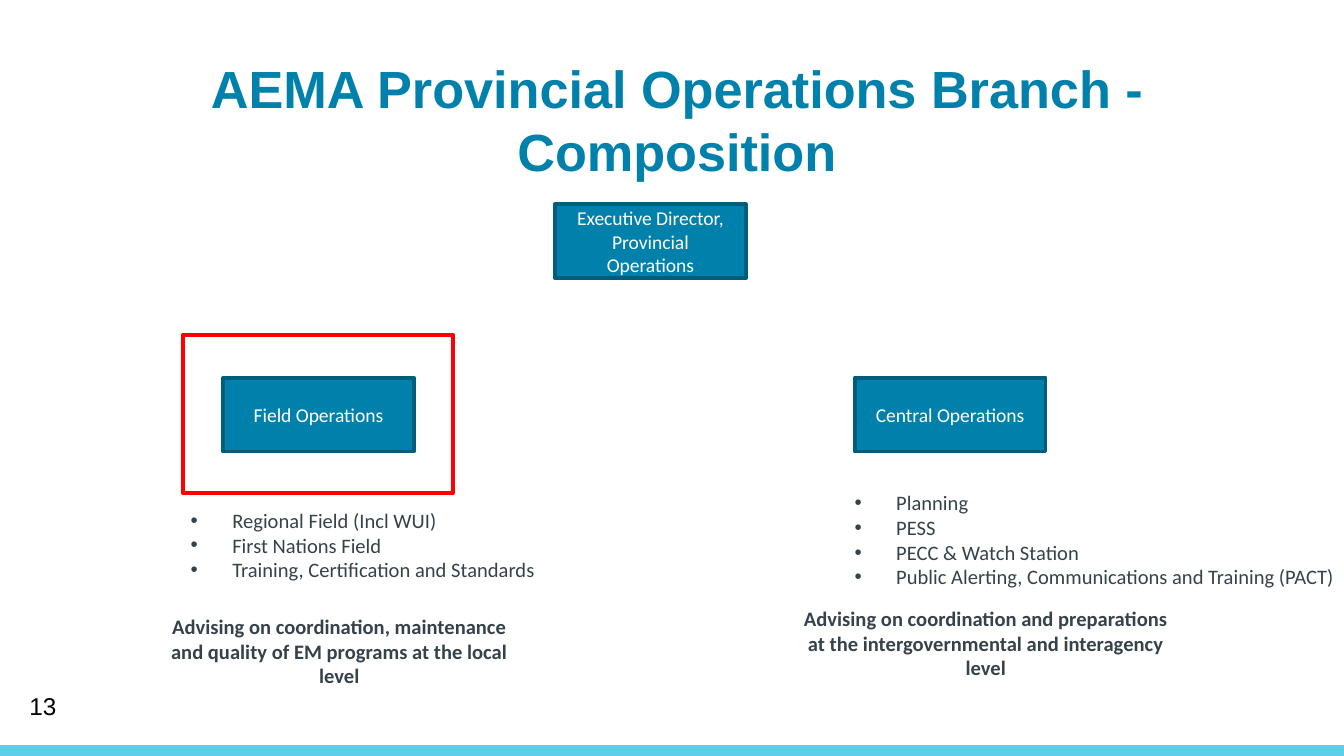
from dataclasses import dataclass

from lxml.etree import SubElement
from pptx import Presentation
from pptx.dml.color import RGBColor as RGB
from pptx.enum.shapes import MSO_SHAPE as Preset
from pptx.enum.text import MSO_ANCHOR as Anchor, MSO_AUTO_SIZE as AutoSize, PP_ALIGN as Align
from pptx.oxml.ns import qn
from pptx.util import Inches, Pt

WIDTH = 10
HEIGHT = WIDTH * 9 / 16
STRIPE = 0.08


@dataclass(frozen=True)
class Theme:
    """Colours, type sizes and fonts of the slide."""

    blue: str = "0081AB"
    navy: str = "005E7C"
    sky: str = "5FCEEA"
    red: str = "FF0000"
    slate: str = "36424A"
    white: str = "FFFFFF"
    black: str = "000000"
    title_size: float = 28
    number_size: float = 13
    body_size: float = 11
    role_size: float = 10.5
    heading_font: str = "Arial"
    body_font: str = "Calibri"


THEME = Theme()


def apply_format(target, values):
    """Set each named format value on the target."""
    for name, value in values.items():
        setattr(target, name, value)


def write_lines(frame, lines, size, color, font=THEME.body_font, bold=False, **layout):
    """Write one paragraph per line with shared run and paragraph formats."""
    for index, line in enumerate(lines):
        paragraph = frame.paragraphs[0] if index == 0 else frame.add_paragraph()
        apply_format(paragraph, layout)
        run = paragraph.add_run()
        run.text = line
        apply_format(run.font, {"size": Pt(size), "name": font, "bold": bold})
        run.font.color.rgb = RGB.from_string(color)


def add_text(slide, area, lines, size, color, frame_format=None, **formats):
    """Add a wrapped text box and return its frame."""
    frame = slide.shapes.add_textbox(*map(Inches, area)).text_frame
    apply_format(frame, {"word_wrap": True, **(frame_format or {})})
    write_lines(frame, lines, size, color, **formats)
    return frame


def add_box(slide, area, fill=None, line=None):
    """Add a flat rectangle with an optional fill and outline."""
    box = slide.shapes.add_shape(Preset.RECTANGLE, *map(Inches, area))
    box.shadow.inherit = False
    for paint, color in ((box.fill, fill), (box.line.fill, line)):
        if color:
            paint.solid()
            paint.fore_color.rgb = RGB.from_string(color)
        else:
            paint.background()
    if line:
        box.line.width = Pt(2)
    return box


def add_role(slide, left, top, role):
    """Add a labelled box of the organisation chart."""
    box = add_box(slide, (left, top, 1.42, 0.55), THEME.blue, THEME.navy)
    apply_format(box.text_frame, {"word_wrap": True, "vertical_anchor": Anchor.MIDDLE})
    write_lines(box.text_frame, [role], THEME.role_size, THEME.white, alignment=Align.CENTER)


def add_units(slide, area, units):
    """Add the bulleted list of units below a role."""
    frame = add_text(slide, area, units, THEME.body_size, THEME.slate,
                     {"auto_size": AutoSize.SHAPE_TO_FIT_TEXT})
    for paragraph in frame.paragraphs:
        properties = paragraph._p.get_or_add_pPr()
        properties.set("marL", str(Inches(0.31)))
        properties.set("indent", str(-Inches(0.31)))
        SubElement(SubElement(properties, qn("a:buClr")), qn("a:srgbClr"), val=THEME.slate)
        SubElement(properties, qn("a:buFont"), typeface=THEME.heading_font)
        SubElement(properties, qn("a:buChar"), char="•")


def add_mandate(slide, left, top, mandate):
    """Add the bold statement of what a division does."""
    add_text(slide, (left, top, 2.93, 0.66), [mandate], THEME.body_size, THEME.slate,
             {"auto_size": AutoSize.SHAPE_TO_FIT_TEXT}, bold=True, alignment=Align.CENTER)


def main():
    """Build the slide and save it."""
    deck = Presentation()
    apply_format(deck, {"slide_width": Inches(WIDTH), "slide_height": Inches(HEIGHT)})
    slide = deck.slides.add_slide(deck.slide_layouts[6])

    add_box(slide, (0, HEIGHT - STRIPE, WIDTH, STRIPE), THEME.sky)
    add_text(slide, (0.59, 0.37, 8.99, 0.57), ["AEMA Provincial Operations Branch - Composition"],
             THEME.title_size, THEME.blue, {"margin_left": 0}, font=THEME.heading_font,
             bold=True, alignment=Align.CENTER)
    add_text(slide, (0.12, 5.1, 2.25, 0.3), ["13"], THEME.number_size, THEME.black,
             {"vertical_anchor": Anchor.MIDDLE}, font=THEME.heading_font)

    add_role(slide, 4.13, 1.52, "Executive Director, Provincial Operations")
    for left, division in ((1.66, "Field Operations"), (6.36, "Central Operations")):
        add_role(slide, left, 2.81, division)
    add_box(slide, (1.36, 2.49, 2.01, 1.18), line=THEME.red)

    add_units(slide, (6.26, 3.6, 3.81, 0.84),
              ["Planning", "PESS", "PECC & Watch Station",
               "Public Alerting, Communications and Training (PACT)"])
    add_units(slide, (1.32, 3.73, 2.79, 0.66),
              ["Regional Field (Incl WUI)", "First Nations Field",
               "Training, Certification and Standards"])
    add_mandate(slide, 1.06, 4.52, "Advising on coordination, maintenance and quality "
                "of EM programs at the local level")
    add_mandate(slide, 5.87, 4.46, "Advising on coordination and preparations at the "
                "intergovernmental and interagency level")

    deck.save("out.pptx")


if __name__ == "__main__":
    main()
